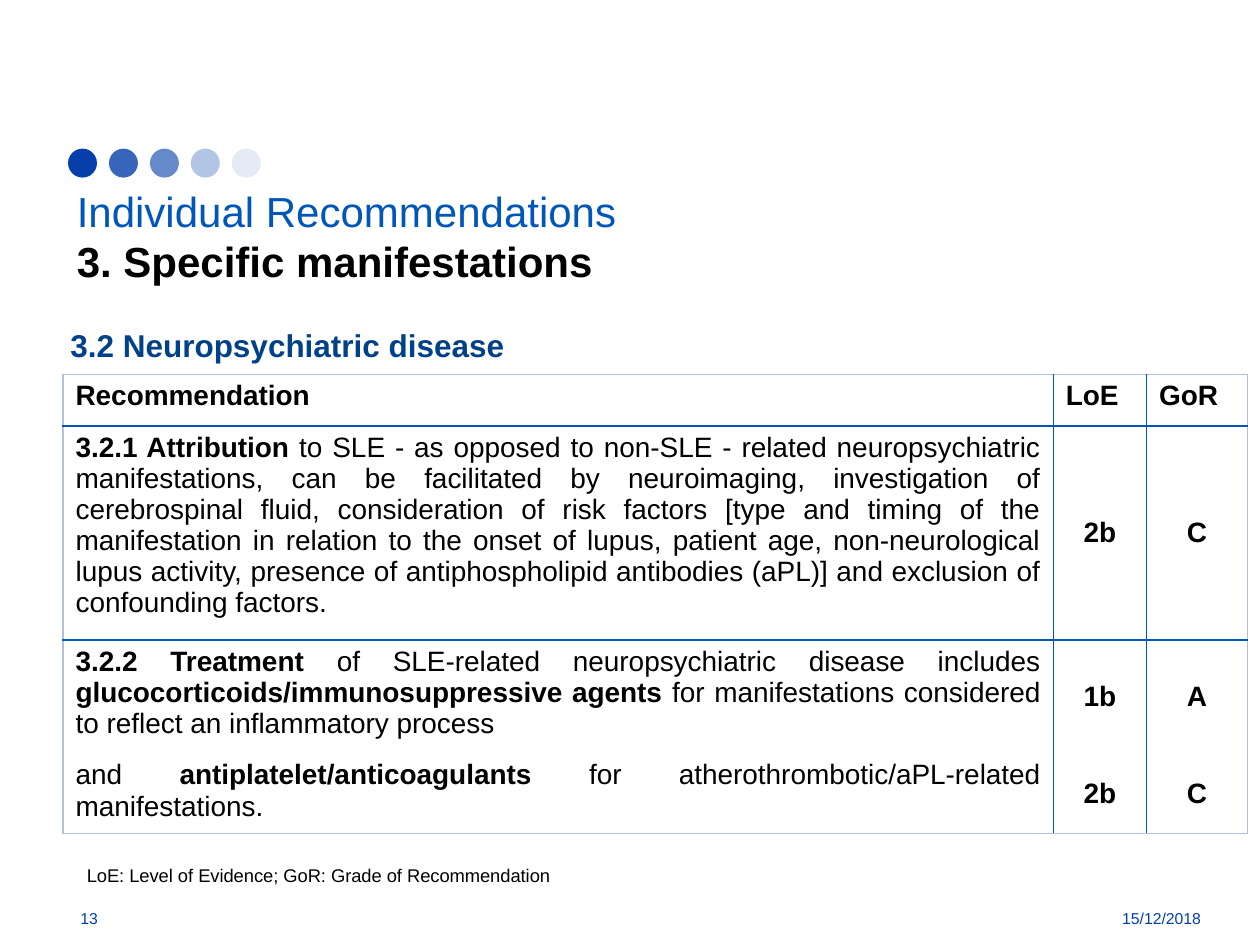
from lxml.etree import SubElement as Sub
from pptx import Presentation
from pptx.dml.color import RGBColor
from pptx.enum.shapes import MSO_SHAPE as Shape
from pptx.enum.text import MSO_ANCHOR as Anchor, PP_ALIGN as Align
from pptx.oxml import parse_xml
from pptx.oxml.ns import nsdecls, qn
from pptx.util import Inches, Pt

BLUE = "0057B8"
PALE = "B4BEDF"
BLACK = "000000"
CELL = {"size": Pt(16), "color": BLACK}
HEAVY = {**CELL, "bold": True}
ROWS = [
    ([("Recommendation", True)], "LoE", "GoR"),
    ([("3.2.1 Attribution", True),
      (" to SLE - as opposed to non-SLE - related neuropsychiatric "
       "manifestations, can be facilitated by neuroimaging, investigation of "
       "cerebrospinal fluid, consideration of risk factors [type and timing of "
       "the manifestation in relation to the onset of lupus, patient age, "
       "non-neurological lupus activity, presence of antiphospholipid "
       "antibodies (aPL)] and exclusion of confounding factors.", False)],
     "2b", "C"),
    ([("3.2.2 Treatment", True),
      (" of SLE-related neuropsychiatric disease includes ", False),
      ("glucocorticoids/immunosuppressive agents", True),
      (" for manifestations considered to reflect an inflammatory process",
       False)], "1b", "A"),
    ([("and ", False), ("antiplatelet/anticoagulants", True),
      (" for atherothrombotic/aPL-related manifestations.", False)], "2b", "C"),
]
WIDTHS = [7.86, 0.74, 0.8]
HEIGHTS = [0.41, 1.7, 0.9, 0.63]


def rgb(color):
    return RGBColor.from_string(color)


def style(font, form):
    font.name = "Arial"
    for key, value in form.items():
        if key == "color":
            font.color.rgb = rgb(value)
        else:
            setattr(font, key, value)


def add_run(para, text, form):
    run = para.add_run()
    run.text = text
    style(run.font, form)


def add_text(slide, text, box, form, align=Align.LEFT, anchor=Anchor.TOP,
             wrap=False):
    frame = slide.shapes.add_textbox(*map(Inches, box)).text_frame
    frame.word_wrap = wrap
    frame.vertical_anchor = anchor
    para = frame.paragraphs[0]
    para.alignment = align
    add_run(para, text, form)


def add_dots(slide):
    for i, alpha in enumerate([100, 80, 61, 30, 10]):
        box = (0.54 + 0.325 * i, 1.18, 0.23, 0.23)
        dot = slide.shapes.add_shape(Shape.OVAL, *map(Inches, box))
        dot.shadow.inherit = False
        dot.line.fill.background()
        dot.fill.solid()
        dot.fill.fore_color.rgb = rgb("063FA9")
        if alpha < 100:
            tone = dot.fill._xPr.find(".//" + qn("a:srgbClr"))
            Sub(tone, qn("a:alpha"), val=str(alpha * 1000))


def add_title(slide):
    title = slide.shapes.title
    box = {"left": 0.51, "top": 1.42, "width": 9.11, "height": 0.69}
    for key, value in box.items():
        setattr(title, key, Inches(value))
    frame = title.text_frame
    frame.word_wrap = True
    frame.vertical_anchor = Anchor.TOP
    para = frame.paragraphs[0]
    para.alignment = Align.LEFT
    form = {"size": Pt(24), "bold": False, "color": "0056B9"}
    add_run(para, "Individual Recommendations", form)
    para.add_line_break()
    add_run(para, "3. Specific manifestations",
            {**form, "bold": True, "color": BLACK})


def set_edges(cell, edges):
    props = cell._tc.get_or_add_tcPr()
    for i, (side, color) in enumerate(edges.items()):
        fill = "<a:noFill/>"
        if color:
            fill = f'<a:solidFill><a:srgbClr val="{color}"/></a:solidFill>'
        width = Pt(0.75 if color == PALE else 1)
        props.insert(i, parse_xml(
            f'<a:ln{side} {nsdecls("a")} w="{width}">{fill}</a:ln{side}>'))


def add_grid(slide):
    box = (0.5, 2.97, sum(WIDTHS), sum(HEIGHTS))
    table = slide.shapes.add_table(
        len(ROWS), len(WIDTHS), *map(Inches, box)).table
    table.first_row = table.horz_banding = False
    for col, width in zip(table.columns, WIDTHS):
        col.width = Inches(width)
    for row, height in zip(table.rows, HEIGHTS):
        row.height = Inches(height)
    last = len(ROWS) - 1
    for r, (parts, *marks) in enumerate(ROWS):
        for c in range(len(WIDTHS)):
            cell = table.cell(r, c)
            cell.fill.background()
            set_edges(cell, {
                "L": BLUE if c else PALE,
                "R": BLUE if c < len(marks) else PALE,
                "T": PALE if r == 0 else None if r == last else BLUE,
                "B": PALE if r == last else None if r == last - 1 else BLUE,
            })
            para = cell.text_frame.paragraphs[0]
            if c == 0:
                para.alignment = Align.JUSTIFY
                for text, bold in parts:
                    add_run(para, text, {**CELL, "bold": bold})
            else:
                add_run(para, marks[c - 1], HEAVY)
                if r:
                    para.alignment = Align.CENTER
                    cell.vertical_anchor = Anchor.MIDDLE


def main():
    deck = Presentation()
    deck.slide_width, deck.slide_height = Inches(10), Inches(7.5)
    slide = deck.slides.add_slide(deck.slide_layouts[5])
    add_dots(slide)
    add_title(slide)
    small = {"size": Pt(9), "color": "003FA8"}
    add_text(slide, "13", (0.54, 7.09, 0.96, 0.4), small,
             anchor=Anchor.MIDDLE, wrap=True)
    add_text(slide, "15/12/2018", (8.29, 7.09, 1.34, 0.4), small,
             Align.RIGHT, Anchor.MIDDLE, True)
    add_text(slide, "3.2 Neuropsychiatric disease", (0.46, 2.54, 3.68, 0.4),
             {"size": Pt(18), "bold": True, "color": "00418A"})
    add_grid(slide)
    add_text(slide, "LoE: Level of Evidence; GoR: Grade of Recommendation",
             (0.59, 6.81, 3.95, 0.28), {"size": Pt(10.5), "color": BLACK})
    deck.save("out.pptx")


if __name__ == "__main__":
    main()
